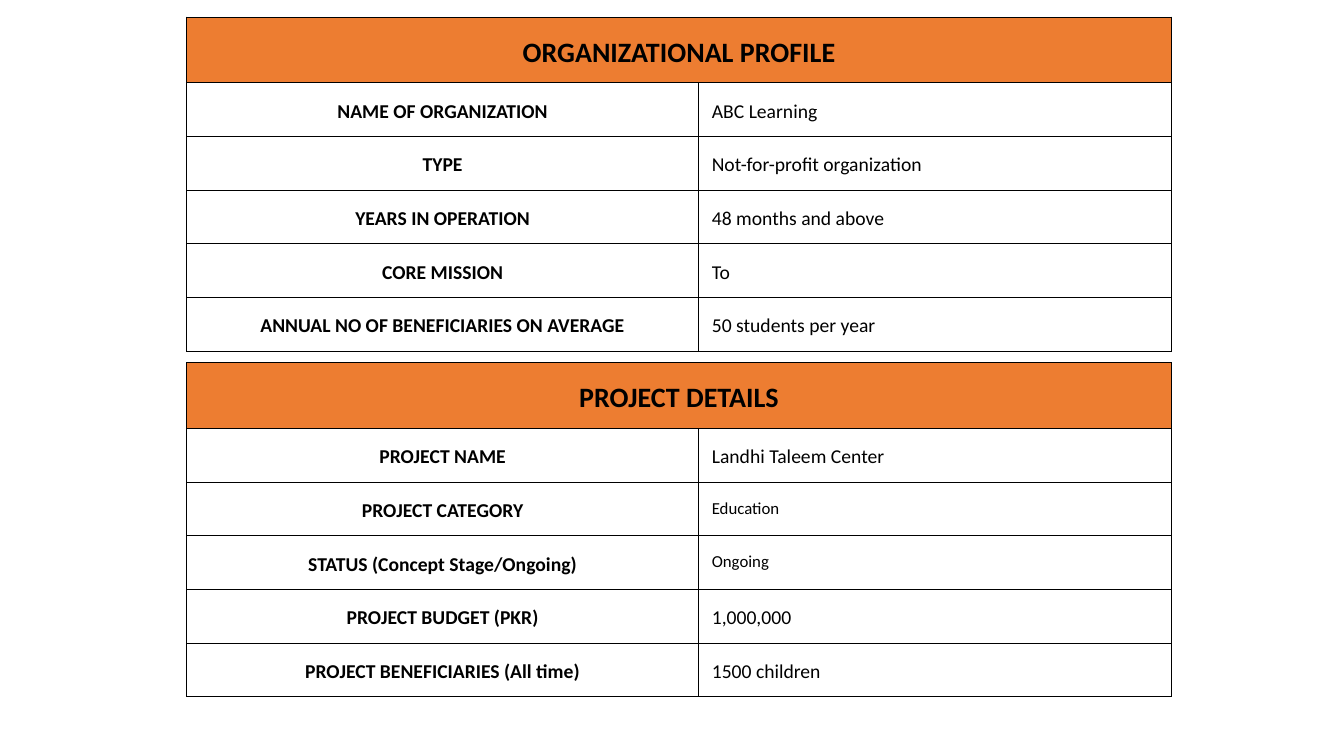
from lxml import etree
from pptx import Presentation
from pptx.dml.color import RGBColor
from pptx.enum.text import MSO_ANCHOR, PP_ALIGN
from pptx.oxml.ns import qn
from pptx.util import Inches, Pt

CENTER = PP_ALIGN.CENTER
LEFT = PP_ALIGN.LEFT
TOP = MSO_ANCHOR.TOP

COLORS = {"header": "ED7D31", "body": "FFFFFF", "text": "000000", "border": "000000"}
FONT = "Calibri"
SLIDE_WIDTH, SLIDE_HEIGHT = 13.33, 7.5
TABLE_LEFT = 1.85
COLUMN_WIDTHS = (5.08, 4.69)
HEADER_HEIGHT, ROW_HEIGHT = 0.65, 0.53
CELL_MARGIN = 0.13
BORDER_WIDTH = 0.75

SECTIONS = [
    (0.17, "ORGANIZATIONAL PROFILE", [
        ("NAME OF ORGANIZATION", "ABC Learning", 14),
        ("TYPE", "Not-for-profit organization", 14),
        ("YEARS IN OPERATION", "48 months and above", 14),
        ("CORE MISSION", "To", 14),
        ("ANNUAL NO OF BENEFICIARIES ON AVERAGE", "50 students per year", 14),
    ]),
    (3.6, "PROJECT DETAILS", [
        ("PROJECT NAME", "Landhi Taleem Center", 14),
        ("PROJECT CATEGORY", "Education", 12),
        ("STATUS (Concept Stage/Ongoing)", "Ongoing", 12),
        ("PROJECT BUDGET (PKR)", "1,000,000", 14),
        ("PROJECT BENEFICIARIES (All time)", "1500 children", 14),
    ]),
]


def write_text(cell, text, size=14, bold=False, align=LEFT):
    paragraph = cell.text_frame.paragraphs[0]
    paragraph.alignment = align
    paragraph.line_spacing = 1.15
    run = paragraph.add_run()
    run.text = text
    run.font.name = FONT
    run.font.size = Pt(size)
    run.font.bold = bold
    run.font.color.rgb = RGBColor.from_string(COLORS["text"])


def style_cell(cell, fill):
    cell.margin_left = cell.margin_right = Inches(CELL_MARGIN)
    cell.margin_top = cell.margin_bottom = Inches(CELL_MARGIN)
    cell.vertical_anchor = TOP
    cell.fill.solid()
    cell.fill.fore_color.rgb = RGBColor.from_string(fill)
    properties = cell._tc.get_or_add_tcPr()
    for position, side in enumerate(("a:lnL", "a:lnR", "a:lnT", "a:lnB")):
        line = etree.Element(qn(side), w=str(Pt(BORDER_WIDTH)))
        solid_fill = etree.SubElement(line, qn("a:solidFill"))
        etree.SubElement(solid_fill, qn("a:srgbClr"), val=COLORS["border"])
        properties.insert(position, line)


def add_section_table(slide, left, top, title, entries):
    height = HEADER_HEIGHT + ROW_HEIGHT * len(entries)
    shape = slide.shapes.add_table(
        len(entries) + 1, len(COLUMN_WIDTHS),
        Inches(left), Inches(top), Inches(sum(COLUMN_WIDTHS)), Inches(height))
    table = shape.table
    table.first_row = False
    table.horz_banding = False
    for column, width in zip(table.columns, COLUMN_WIDTHS):
        column.width = Inches(width)
    for index, row in enumerate(table.rows):
        row.height = Inches(ROW_HEIGHT if index else HEADER_HEIGHT)
        for cell in row.cells:
            style_cell(cell, COLORS["body" if index else "header"])

    table.cell(0, 0).merge(table.cell(0, 1))
    write_text(table.cell(0, 0), title, size=20, bold=True, align=CENTER)
    for index, (label, value, value_size) in enumerate(entries, start=1):
        write_text(table.cell(index, 0), label, bold=True, align=CENTER)
        write_text(table.cell(index, 1), value, size=value_size)


def main():
    presentation = Presentation()
    presentation.slide_width = Inches(SLIDE_WIDTH)
    presentation.slide_height = Inches(SLIDE_HEIGHT)
    slide = presentation.slides.add_slide(presentation.slide_layouts[6])
    for top, title, entries in SECTIONS:
        add_section_table(slide, TABLE_LEFT, top, title, entries)
    presentation.save("out.pptx")


if __name__ == "__main__":
    main()
